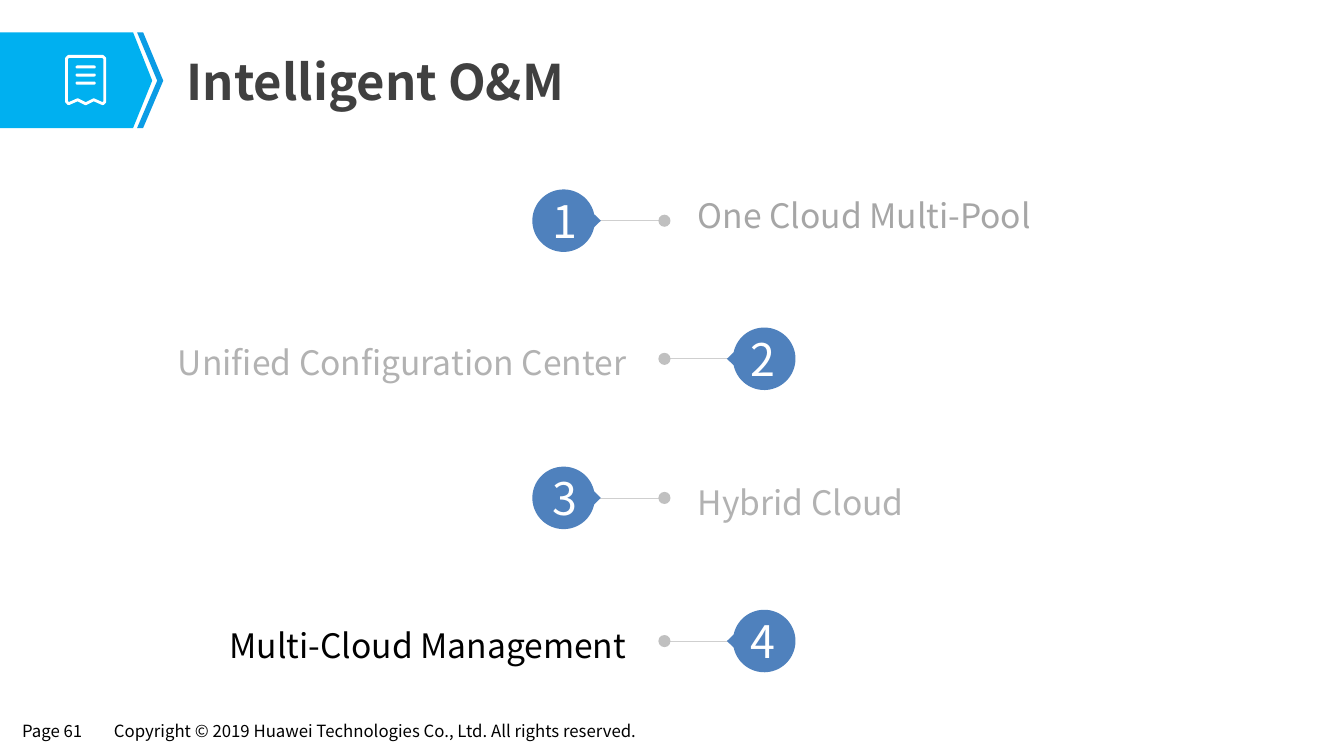
from math import cos, pi, sin

from lxml.etree import SubElement
from pptx import Presentation
from pptx.dml.color import RGBColor
from pptx.enum.shapes import MSO_CONNECTOR as Connector, MSO_SHAPE as Preset
from pptx.enum.text import MSO_ANCHOR as Anchor, PP_ALIGN as Align
from pptx.oxml.ns import qn
from pptx.util import Pt

PX = 9144  # 100 px to the inch
FONT = "Noto Sans CJK SC"
BLUE, DARK_BLUE, BADGE_BLUE = "00B0F0", "0B9CE5", "4F81BD"
WHITE, BLACK, TITLE_GRAY = "FFFFFF", "000000", "404040"
LINE_GRAY, DOT_GRAY = "CFCFCF", "C0C0C0"

AXIS_X, BADGE_OFFSET, LABEL_GAP = 659, 100, 35
RADIUS, TIP_REACH, DOT_SIZE = 31, 37, 12
LABEL_HEIGHT = 103

# number, label, colour, centre line, label top, label width, side of the badge
TOPICS = [
    ("1", "One Cloud Multi-Pool", "A6A6A6", 219, 158, 408, -1),
    ("2", "Unified Configuration Center", "B2B2B2", 356, 304, 466, 1),
    ("3", "Hybrid Cloud", "B2B2B2", 494, 443, 343, -1),
    ("4", "Multi-Cloud Management", BLACK, 636, 584, 497, 1),
]


def rgb(color):
    return RGBColor.from_string(color)


class SlideBuilder:
    def __init__(self, slide):
        self.shapes = slide.shapes

    def paint(self, shape, fill=None, line=None, width=0):
        shape.shadow.inherit = False
        if fill:
            shape.fill.solid()
            shape.fill.fore_color.rgb = rgb(fill)
        else:
            shape.fill.background()
        if line:
            shape.line.color.rgb = rgb(line)
            shape.line.width = Pt(width)
        else:
            shape.line.fill.background()
        return shape

    def set_text(self, shape, text, size, color, insets=(0, 0, 0, 0), align=Align.LEFT,
                 anchor=Anchor.MIDDLE, bold=False, spacing=None, wrap=True):
        """Fill a shape with one paragraph; insets run left, top, right, bottom."""
        frame = shape.text_frame
        frame.text = text
        frame.word_wrap = wrap
        frame.vertical_anchor = anchor
        (frame.margin_left, frame.margin_top,
         frame.margin_right, frame.margin_bottom) = [inset * PX for inset in insets]
        paragraph = frame.paragraphs[0]
        paragraph.alignment = align
        if spacing:
            paragraph.line_spacing = spacing
        run = paragraph.runs[0]
        font = run.font
        font.name, font.size, font.bold = FONT, Pt(size), bold
        font.color.rgb = rgb(color)
        SubElement(run._r.get_or_add_rPr(), qn("a:ea")).set("typeface", FONT)

    def text(self, left, top, width, height, text, size, color, **style):
        box = self.shapes.add_textbox(left * PX, top * PX, width * PX, height * PX)
        self.set_text(box, text, size, color, **style)

    def preset(self, kind, left, top, width, height, fill):
        shape = self.shapes.add_shape(kind, left * PX, top * PX, width * PX, height * PX)
        return self.paint(shape, fill)

    def outline(self, points, fill=None, line=None, width=0):
        corners = [(round(x * PX), round(y * PX)) for x, y in points]
        builder = self.shapes.build_freeform(*corners[0], scale=1.0)
        builder.add_line_segments(corners[1:], close=True)
        return self.paint(builder.convert_to_shape(), fill, line, width)

    def line(self, start, end, y, color, width):
        connector = self.shapes.add_connector(
            Connector.STRAIGHT, start * PX, y * PX, end * PX, y * PX)
        connector.line.color.rgb = rgb(color)
        connector.line.width = Pt(width)
        SubElement(connector._element.spPr, qn("a:effectLst"))

    def badge(self, center_x, center_y, number, side):
        """Draw a numbered disc whose small tip points back to the axis."""
        steps = 72
        opening = pi / 15
        angles = [opening + (2 * pi - 2 * opening) * i / steps for i in range(steps + 1)]
        points = [(TIP_REACH, 0)] + [(RADIUS * cos(a), RADIUS * sin(a)) for a in angles]
        shape = self.outline([(center_x - side * x, center_y + y) for x, y in points],
                             BADGE_BLUE)
        insets = (4, 0, 0, 0) if side > 0 else (0, 0, 4, 0)
        self.set_text(shape, number, 32, WHITE, insets=insets, align=Align.CENTER)

    def topic(self, number, label, color, y, label_top, label_width, side):
        badge_x = AXIS_X + side * BADGE_OFFSET
        self.line(AXIS_X, badge_x - side * RADIUS, y, LINE_GRAY, 0.5)
        if side > 0:
            label_left, align = AXIS_X - LABEL_GAP - label_width - 3, Align.RIGHT
        else:
            label_left, align = AXIS_X + LABEL_GAP - 2, Align.LEFT
        self.text(label_left, label_top, label_width, LABEL_HEIGHT, label, 24, color,
                  align=align, spacing=1.2)
        self.preset(Preset.OVAL, AXIS_X - DOT_SIZE // 2, y - DOT_SIZE // 2,
                    DOT_SIZE, DOT_SIZE, DOT_GRAY)
        self.badge(badge_x - (side > 0), y, number, side)

    def header(self, title):
        self.outline([(0, 32), (132, 32), (151, 80), (132, 127), (0, 127)], BLUE)
        self.outline([(136, 32), (142, 32), (162, 80), (142, 127), (136, 127), (156, 80)],
                     DARK_BLUE)
        receipt = [(66, 58), (68, 56), (102, 56), (104, 58), (104, 101), (102, 103),
                   (93, 99), (85, 103), (77, 99), (68, 103), (66, 101)]
        self.outline(receipt, line=WHITE, width=2)
        for row in range(3):
            bar = self.preset(Preset.ROUNDED_RECTANGLE, 75, 65 + 8 * row, 20, 3, WHITE)
            bar.adjustments[0] = 0.5
        self.text(174, 45, 1075, 70, title, 35, TITLE_GRAY, insets=(11, 6, 11, 6), bold=True)

    def footer(self, page, notice):
        for left, width, text in ((13, 84, page), (104, 561, notice)):
            self.text(left, 711, width, 29, text, 12, BLACK, insets=(9, 4, 9, 4),
                      anchor=Anchor.TOP, wrap=False)


def main():
    presentation = Presentation()
    presentation.slide_width, presentation.slide_height = 1333 * PX, 750 * PX
    builder = SlideBuilder(presentation.slides.add_slide(presentation.slide_layouts[6]))
    builder.footer("Page 61",
                   "Copyright © 2019 Huawei Technologies Co., Ltd. All rights reserved.")
    builder.header("Intelligent O&M")
    for topic in TOPICS:
        builder.topic(*topic)
    presentation.save("out.pptx")


if __name__ == "__main__":
    main()
